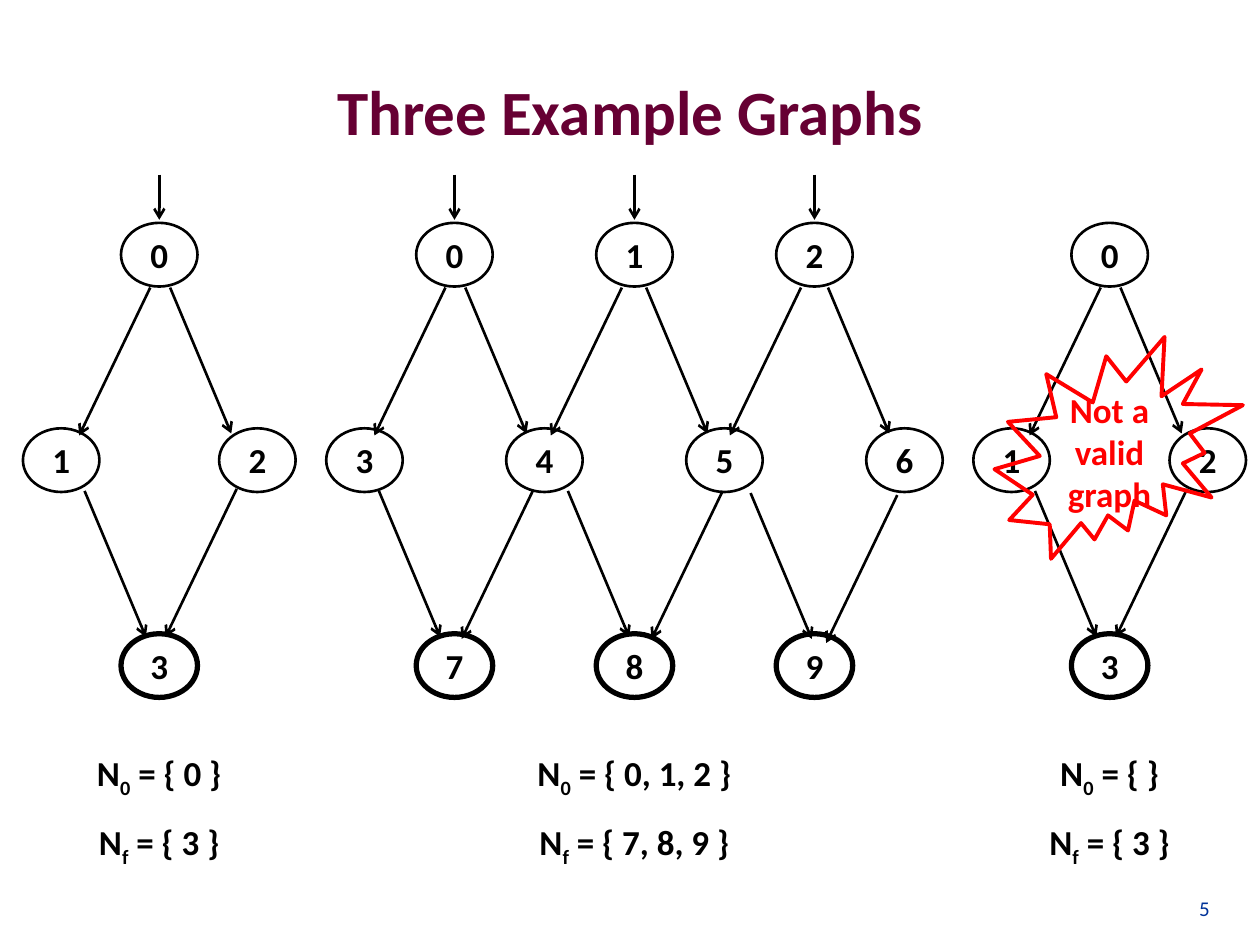
from lxml import etree
from pptx import Presentation
from pptx.dml.color import RGBColor
from pptx.enum.shapes import MSO_CONNECTOR, MSO_SHAPE
from pptx.enum.text import MSO_ANCHOR, PP_ALIGN
from pptx.oxml.ns import qn
from pptx.util import Inches, Pt

ELLIPSE, SEAL = MSO_SHAPE.OVAL, MSO_SHAPE.EXPLOSION2
STRAIGHT = MSO_CONNECTOR.STRAIGHT
CENTER, RIGHT = PP_ALIGN.CENTER, PP_ALIGN.RIGHT
TOP, MIDDLE, BOTTOM = MSO_ANCHOR.TOP, MSO_ANCHOR.MIDDLE, MSO_ANCHOR.BOTTOM
BLACK = RGBColor(0x00, 0x00, 0x00)
MAROON = RGBColor(0x66, 0x00, 0x33)
NAVY = RGBColor(0x00, 0x33, 0x99)
RED = RGBColor(0xFF, 0x00, 0x00)

deck = Presentation()
deck.slide_width, deck.slide_height = Inches(10), Inches(7.5)
page = deck.slides.add_slide(deck.slide_layouts[6])
COLUMN = deck.slide_width / 14
ROW = deck.slide_height / 4.6
FIRST_ROW = 1.24
NODE_WIDTH, NODE_HEIGHT = 0.85, 0.31
LABEL_WIDTH, LABEL_HEIGHT = 0.48, 0.27


def place(*cells):
    return [round(cell * (ROW if i % 2 else COLUMN)) for i, cell in enumerate(cells)]


def write(box, text, size=20, color=BLACK, bold=True, align=CENTER,
          anchor=TOP, wrap=True, gap=0):
    frame = box.text_frame
    frame.word_wrap = wrap
    frame.vertical_anchor = anchor
    for i, line in enumerate(text.split("\n")):
        para = frame.add_paragraph() if i else frame.paragraphs[0]
        para.alignment = align
        if i and gap:
            para.space_before = Pt(gap)
        for j, part in enumerate(line.split("|")):
            span = para.add_run()
            span.text = part
            span.font.name = "Calibri"
            span.font.size = Pt(size)
            span.font.bold = bold
            span.font.color.rgb = color
            if j % 2:
                span.font._element.set("baseline", "-25000")


title = page.shapes.add_textbox(*place(0.7, 0.15, 12.6, 0.77))
write(title, "Three Example Graphs", size=36, color=MAROON, anchor=MIDDLE)
number = page.shapes.add_textbox(*place(12.61, 4.19, 0.97, 0.32))
write(number, "5", size=12, color=NAVY, bold=False, align=RIGHT, anchor=BOTTOM)

LEFT_EDGE, RIGHT_EDGE = (-0.79, 0.72), (0.68, 0.71)
DIAMOND = ((0,), (-1.09, 1.09), (0,))
DIAMOND_EDGES = (
    (0, -0.1, 0.16, LEFT_EDGE), (0, 0.12, 0.16, RIGHT_EDGE),
    (1, 0.26, 0.15, RIGHT_EDGE), (2, -0.23, 0.14, LEFT_EDGE),
)
LATTICE = ((-2, 0, 2), (-3, -1, 1, 3), (-2, 0, 2))
LATTICE_EDGES = (
    (0, -0.1, 0.16, LEFT_EDGE), (0, 0.12, 0.16, RIGHT_EDGE),
    (1, -0.14, 0.16, LEFT_EDGE), (1, 0.13, 0.16, RIGHT_EDGE),
    (2, -0.15, 0.16, LEFT_EDGE), (2, 0.15, 0.16, RIGHT_EDGE),
    (3, 0.16, 0.15, RIGHT_EDGE), (4, -0.13, 0.15, LEFT_EDGE),
    (4, 0.26, 0.15, RIGHT_EDGE), (5, -0.02, 0.15, LEFT_EDGE),
    (5, 0.29, 0.16, RIGHT_EDGE), (6, -0.08, 0.17, LEFT_EDGE),
)
GRAPHS = (
    (1.77, DIAMOND, DIAMOND_EDGES, 1, 2.23, "N|0| = { 0 }\nN|f| = { 3 }"),
    (12.33, DIAMOND, DIAMOND_EDGES, 0, 2.23, "N|0| = { }\nN|f| = { 3 }"),
    (7.05, LATTICE, LATTICE_EDGES, 3, 3.44, "N|0| = { 0, 1, 2 }\nN|f| = { 7, 8, 9 }"),
)

for middle, levels, edges, initial_count, caption_width, caption_text in GRAPHS:
    graph = page.shapes.add_group_shape()
    nodes = [(middle + offset, FIRST_ROW + level, level)
             for level, offsets in enumerate(levels) for offset in offsets]
    for name, (x, y, level) in enumerate(nodes):
        node = graph.shapes.add_shape(ELLIPSE, *place(
            x - NODE_WIDTH / 2, y - NODE_HEIGHT / 2, NODE_WIDTH, NODE_HEIGHT))
        node.shadow.inherit = False
        node.fill.background()
        node.line.color.rgb = BLACK
        node.line.width = Pt(3 if level == 2 else 1.5)
        label = graph.shapes.add_textbox(*place(
            x - LABEL_WIDTH / 2, y - LABEL_HEIGHT / 2, LABEL_WIDTH, LABEL_HEIGHT))
        write(label, str(name), wrap=False)

    arrows = [(x, y - 0.39, x, y - 0.17) for x, y, level in nodes[:initial_count]]
    for source, dx, dy, (run, drop) in edges:
        x, y = nodes[source][0] + dx, nodes[source][1] + dy
        arrows.append((x, y, x + run, y + drop))
    for ends in arrows:
        arrow = graph.shapes.add_connector(STRAIGHT, *place(*ends))
        arrow.line.color.rgb = BLACK
        arrow.line.width = Pt(1.5)
        etree.SubElement(arrow.line._get_or_add_ln(), qn("a:tailEnd"), type="arrow")
        etree.SubElement(arrow._element.spPr, qn("a:effectLst"))

    caption = page.shapes.add_textbox(*place(
        middle - caption_width / 2, 3.63, caption_width, 0.57))
    write(caption, caption_text, gap=12)

seal = page.shapes.add_shape(SEAL, *place(11.05, 1.64, 2.76, 1.08))
seal.shadow.inherit = False
seal.fill.background()
seal.line.color.rgb = RED
seal.line.width = Pt(2.25)
write(seal, "Not a\nvalid\ngraph", color=RED, anchor=MIDDLE, wrap=False)

deck.save("out.pptx")
